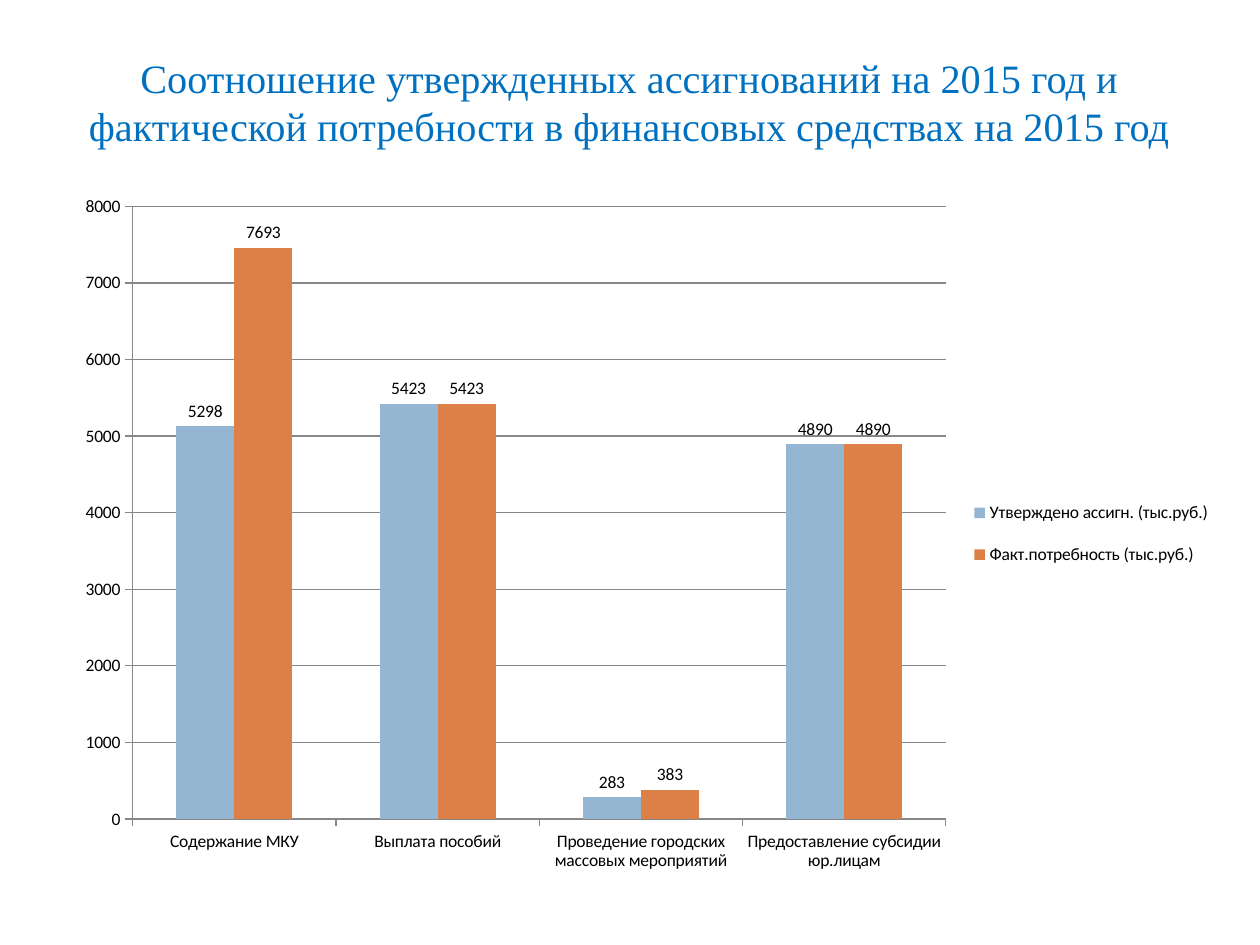
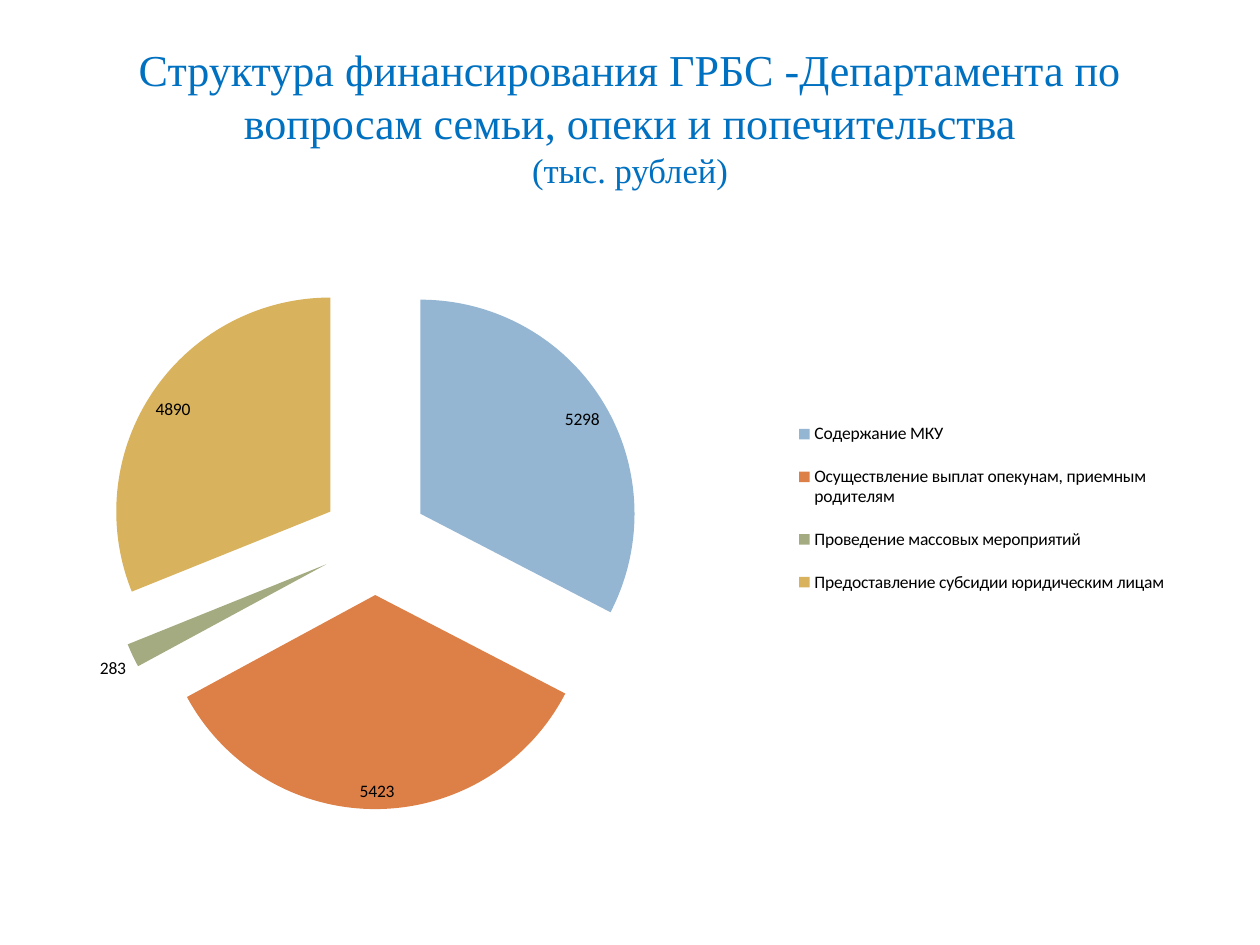
from lxml import etree
from pptx import Presentation
from pptx.chart.data import CategoryChartData
from pptx.dml.color import RGBColor
from pptx.enum.chart import XL_CHART_TYPE as ChartType
from pptx.enum.chart import XL_LABEL_POSITION as LabelPosition
from pptx.enum.chart import XL_LEGEND_POSITION as LegendPosition
from pptx.enum.chart import XL_TICK_MARK as TickMark
from pptx.enum.text import MSO_ANCHOR, MSO_AUTO_SIZE, PP_ALIGN
from pptx.oxml.ns import qn
from pptx.util import Inches, Pt

TITLE_BLUE = RGBColor(0x00, 0x70, 0xC0)
BLACK = RGBColor(0x00, 0x00, 0x00)
AXIS_GREY = RGBColor(0x87, 0x87, 0x87)
PALETTE = [RGBColor(0x94, 0xB6, 0xD2), RGBColor(0xDD, 0x80, 0x47),
           RGBColor(0xA5, 0xAB, 0x81), RGBColor(0xD8, 0xB2, 0x5C)]
TITLE_FONT = "Times New Roman"
CHART_FONT = "Calibri"


def set_layout(parent, index, fractions, inner=False):
    """Place a chart part by x, y, width and height as fractions of the chart."""
    for old in parent.findall(qn("c:layout")):
        parent.remove(old)
    layout = etree.Element(qn("c:layout"))
    parent.insert(index, layout)
    manual = etree.SubElement(layout, qn("c:manualLayout"))
    settings = [("layoutTarget", "inner")] if inner else []
    settings += [("xMode", "edge"), ("yMode", "edge")]
    settings += zip("xywh", fractions)
    for name, value in settings:
        etree.SubElement(manual, qn(f"c:{name}")).set("val", str(value))


deck = Presentation()
deck.slide_width, deck.slide_height = Inches(10), Inches(7.5)

slides = [
    {
        "title": [("Соотношение утвержденных ассигнований на 2015 год и "
                   "фактической потребности в финансовых средствах на 2015 год", 23)],
        "title_height": 1.01,
        "type": ChartType.COLUMN_CLUSTERED,
        "box": (0.5, 1.47, 9.22, 5.59),
        "categories": ["Содержание МКУ", "Выплата пособий",
                       "Проведение городских массовых мероприятий",
                       "Предоставление субсидии юр.лицам"],
        "series": [("Утверждено ассигн. (тыс.руб.)", [5128, 5423, 283, 4890], "5298"),
                   ("Факт.потребность (тыс.руб.)", [7459, 5423, 383, 4890], "7693")],
        "label_position": LabelPosition.OUTSIDE_END,
        "plot": (0.06, 0.03, 0.7, 0.87),
        "legend": (0.78, 0.42, 0.21, 0.15),
    },
    {
        "title": [("Структура финансирования ГРБС -Департамента по "
                   "вопросам семьи, опеки и попечительства", 25.2),
                  ("(тыс. рублей)", 19.8)],
        "title_height": 1.25,
        "type": ChartType.PIE,
        "box": (0.5, 1.75, 9, 5.31),
        "categories": ["Содержание МКУ",
                       "Осуществление выплат опекунам, приемным родителям",
                       "Проведение массовых мероприятий",
                       "Предоставление субсидии юридическим лицам"],
        "series": [("Series 1", [5128, 5423, 283, 4890], "5298")],
        "label_position": LabelPosition.BEST_FIT,
        "plot": (0.01, 0.08, 0.53, 0.8),
        "legend": (0.63, 0.27, 0.36, 0.32),
    },
]

for content in slides:
    slide = deck.slides.add_slide(deck.slide_layouts[5])

    title = slide.shapes.title
    title.left, title.top = Inches(0.5), Inches(0.3)
    title.width, title.height = Inches(9), Inches(content["title_height"])
    frame = title.text_frame
    frame.word_wrap = True
    frame.auto_size = MSO_AUTO_SIZE.NONE
    frame.vertical_anchor = MSO_ANCHOR.MIDDLE
    para = frame.paragraphs[0]
    para.alignment = PP_ALIGN.CENTER
    for number, (text, size) in enumerate(content["title"]):
        if number:
            para.add_line_break()
        span = para.add_run()
        span.text = text
        span.font.name = TITLE_FONT
        span.font.size = Pt(size)
        span.font.color.rgb = TITLE_BLUE

    data = CategoryChartData()
    data.categories = content["categories"]
    for name, values, first_label in content["series"]:
        data.add_series(name, values)
    box = [Inches(length) for length in content["box"]]
    chart = slide.shapes.add_chart(content["type"], *box, data).chart
    chart.has_title = False
    chart.font.name = CHART_FONT
    chart.font.size = Pt(10)
    chart.font.color.rgb = BLACK

    chart.has_legend = True
    chart.legend.position = LegendPosition.RIGHT
    chart.legend.include_in_layout = False
    set_layout(chart.element.find(".//" + qn("c:legend")), 1, content["legend"])
    set_layout(chart.element.find(".//" + qn("c:plotArea")), 0, content["plot"], inner=True)

    plot = chart.plots[0]
    is_pie = content["type"] == ChartType.PIE
    plot.vary_by_categories = is_pie
    for number, series in enumerate(plot.series):
        labels = series.data_labels
        labels.show_value = True
        labels.position = content["label_position"]
        # The first label states a figure other than the plotted value
        first = series.points[0].data_label
        span = first.text_frame.paragraphs[0].add_run()
        span.text = content["series"][number][2]
        span.font.name = CHART_FONT
        span.font.size = Pt(10)
        span.font.color.rgb = BLACK
        first.position = content["label_position"]

        if is_pie:
            explosion = etree.Element(qn("c:explosion"), val="25")
            chart.element.find(".//" + qn("c:ser")).find(qn("c:tx")).addnext(explosion)
            for index, color in enumerate(PALETTE):
                fill = series.points[index].format.fill
                fill.solid()
                fill.fore_color.rgb = color
        else:
            series.format.fill.solid()
            series.format.fill.fore_color.rgb = PALETTE[number]

    if not is_pie:
        plot.gap_width = 150
        plot.overlap = 0
        for axis in (chart.category_axis, chart.value_axis):
            axis.major_tick_mark = TickMark.OUTSIDE
            axis.minor_tick_mark = TickMark.NONE
            axis.format.line.color.rgb = AXIS_GREY
        chart.value_axis.minimum_scale = 0
        chart.value_axis.maximum_scale = 8000
        chart.value_axis.major_unit = 1000
        chart.value_axis.has_major_gridlines = True
        chart.value_axis.major_gridlines.format.line.color.rgb = AXIS_GREY

deck.save("out.pptx")
